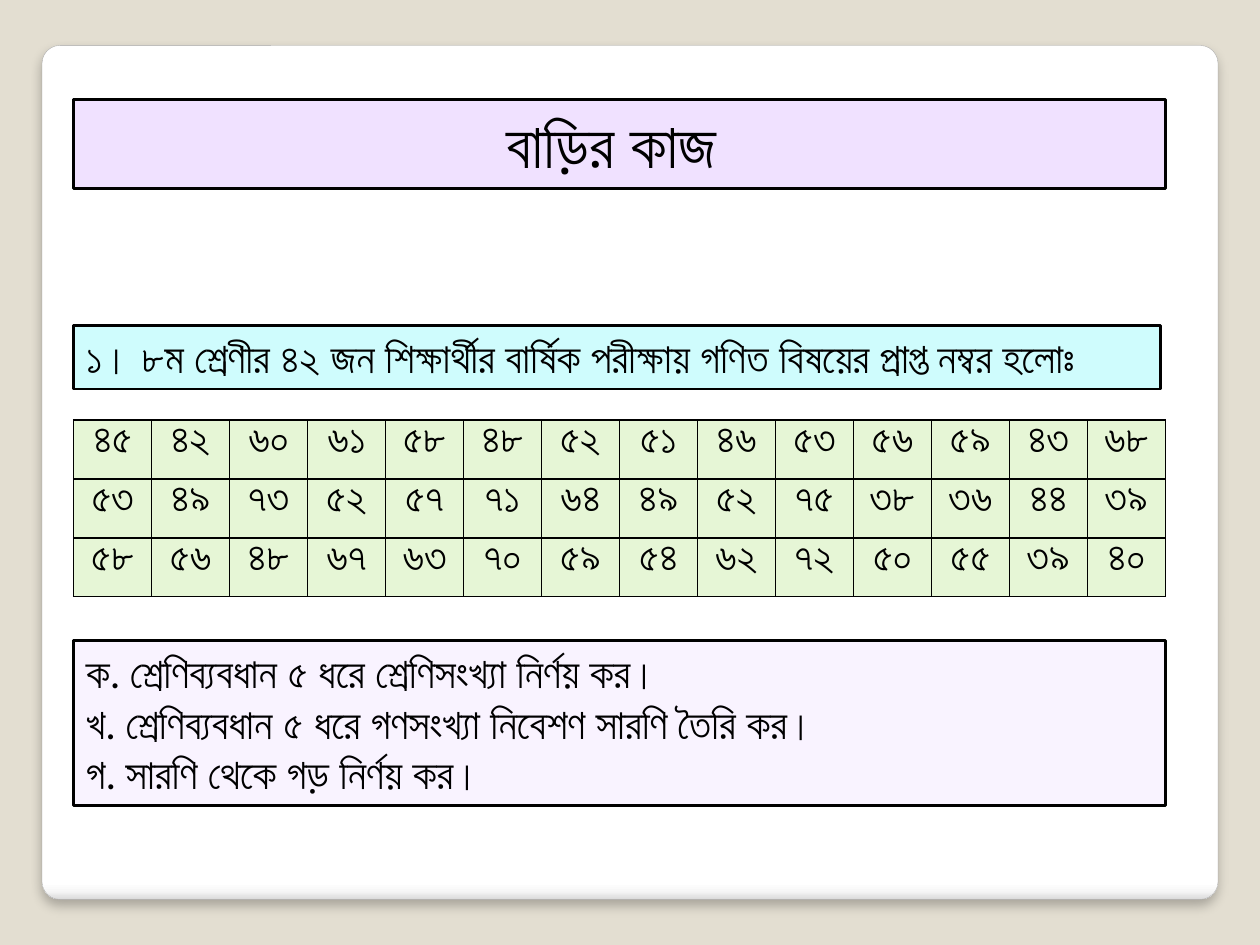
from dataclasses import dataclass

from pptx import Presentation
from pptx.dml.color import RGBColor
from pptx.enum.shapes import MSO_SHAPE
from pptx.enum.text import MSO_ANCHOR, MSO_AUTO_SIZE, PP_ALIGN
from pptx.oxml import parse_xml
from pptx.oxml.ns import nsdecls
from pptx.util import Pt

ROUND = MSO_SHAPE.ROUNDED_RECTANGLE
TOP = MSO_ANCHOR.TOP
GROW = MSO_AUTO_SIZE.SHAPE_TO_FIT_TEXT
LEFT, CENTER = PP_ALIGN.LEFT, PP_ALIGN.CENTER


@dataclass(frozen=True)
class Theme:
    font: str = "Calibri"
    ink: str = "000000"
    back: str = "E3DED1"
    edge: str = "A4A4A4"
    title: str = "F0E1FF"
    lead: str = "CFFCFD"
    cell: str = "E6F6D6"
    task: str = "F9F3FF"
    stops: tuple = ((0, "FFFFFF"), (98, "FFFFFF"), (99, "F7F7F7"), (100, "DADADA"))
    head: int = 36
    body: int = 24


THEME = Theme()
MARKS = [
    "৪৫ ৪২ ৬০ ৬১ ৫৮ ৪৮ ৫২ ৫১ ৪৬ ৫৩ ৫৬ ৫৯ ৪৩ ৬৮",
    "৫৩ ৪৯ ৭৩ ৫২ ৫৭ ৭১ ৬৪ ৪৯ ৫২ ৭৫ ৩৮ ৩৬ ৪৪ ৩৯",
    "৫৮ ৫৬ ৪৮ ৬৭ ৬৩ ৭০ ৫৯ ৫৪ ৬২ ৭২ ৫০ ৫৫ ৩৯ ৪০",
]
TASKS = [
    "ক. শ্রেণিব্যবধান ৫ ধরে শ্রেণিসংখ্যা নির্ণয় কর।",
    "খ. শ্রেণিব্যবধান ৫ ধরে গণসংখ্যা নিবেশণ সারণি তৈরি কর।",
    "গ. সারণি থেকে গড় নির্ণয় কর।",
]


def color(code):
    return RGBColor.from_string(code)


def apply(item, form):
    for name, value in form.items():
        setattr(item, name, value)


def paint(item, code):
    item.fill.solid()
    item.fill.fore_color.rgb = color(code)


def write(para, text, size, align):
    para.alignment = align
    run = para.add_run()
    run.text = text
    apply(run.font, {"name": THEME.font, "size": Pt(size)})
    run.font.color.rgb = color(THEME.ink)


def add_card(slide, box):
    card = slide.shapes.add_shape(ROUND, *map(Pt, box))
    card.adjustments[0] = 0.021
    card.line.color.rgb = color(THEME.edge)
    card.line.width = Pt(0.16)
    stops = "".join(
        f'<a:gs pos="{pos * 1000}"><a:srgbClr val="{code}"/></a:gs>'
        for pos, code in THEME.stops
    )
    card.fill.gradient()
    props = card._element.spPr
    grad = props.find("{*}gradFill")
    props.replace(grad, parse_xml(
        f'<a:gradFill {nsdecls("a")} rotWithShape="1"><a:gsLst>{stops}</a:gsLst>'
        '<a:lin ang="5400000" scaled="0"/></a:gradFill>'
    ))
    props.append(parse_xml(
        f'<a:effectLst {nsdecls("a")}><a:outerShdw blurRad="{Pt(6)}" dist="{Pt(4)}" '
        f'dir="5400000" algn="t" rotWithShape="0"><a:srgbClr val="{THEME.ink}">'
        '<a:alpha val="25000"/></a:srgbClr></a:outerShdw></a:effectLst>'
    ))


def add_panel(slide, box, lines, fill, size, align=LEFT):
    panel = slide.shapes.add_textbox(*map(Pt, box))
    paint(panel, fill)
    panel.line.color.rgb = color(THEME.ink)
    panel.line.width = Pt(1.5)
    frame = panel.text_frame
    apply(frame, {"word_wrap": True, "auto_size": GROW, "vertical_anchor": TOP})
    for i, text in enumerate(lines):
        para = frame.add_paragraph() if i else frame.paragraphs[0]
        write(para, text, size, align)


def add_border(cell):
    props = cell._tc.get_or_add_tcPr()
    for i, side in enumerate(("lnL", "lnR", "lnT", "lnB")):
        props.insert(i, parse_xml(
            f'<a:{side} {nsdecls("a")} w="{Pt(1)}"><a:solidFill>'
            f'<a:srgbClr val="{THEME.ink}"/></a:solidFill></a:{side}>'
        ))


def add_marks(slide, box, rows):
    grid = [row.split() for row in rows]
    count = len(grid[0])
    table = slide.shapes.add_table(len(grid), count, *map(Pt, box)).table
    for col in table.columns:
        col.width = Pt(box[2] / count)
    for row, marks in zip(table.rows, grid):
        row.height = Pt(box[3] / len(grid))
        for cell, mark in zip(row.cells, marks):
            apply(cell, {
                "margin_left": Pt(4), "margin_right": Pt(4), "margin_top": 0,
                "margin_bottom": 0, "vertical_anchor": TOP,
            })
            paint(cell, THEME.cell)
            add_border(cell)
            write(cell.text_frame.paragraphs[0], mark, THEME.body, CENTER)


def main():
    deck = Presentation()
    apply(deck, {"slide_width": Pt(720), "slide_height": Pt(540)})
    slide = deck.slides.add_slide(deck.slide_layouts[6])
    paint(slide.background, THEME.back)
    left, wide = 42, 624
    add_card(slide, (24, 26, 672, 488))
    add_marks(slide, (left, 240, wide, 101), MARKS)
    add_panel(slide, (left, 366, wide, 94.5), TASKS, THEME.task, THEME.body)
    add_panel(
        slide, (left, 186, 621, 36.35),
        ["১। ৮ম শ্রেণীর ৪২ জন শিক্ষার্থীর বার্ষিক পরীক্ষায় গণিত বিষয়ের প্রাপ্ত নম্বর হলোঃ"],
        THEME.lead, THEME.body,
    )
    add_panel(
        slide, (left, 57, wide, 50.9), ["বাড়ির কাজ "],
        THEME.title, THEME.head, CENTER,
    )
    deck.save("out.pptx")


if __name__ == "__main__":
    main()
